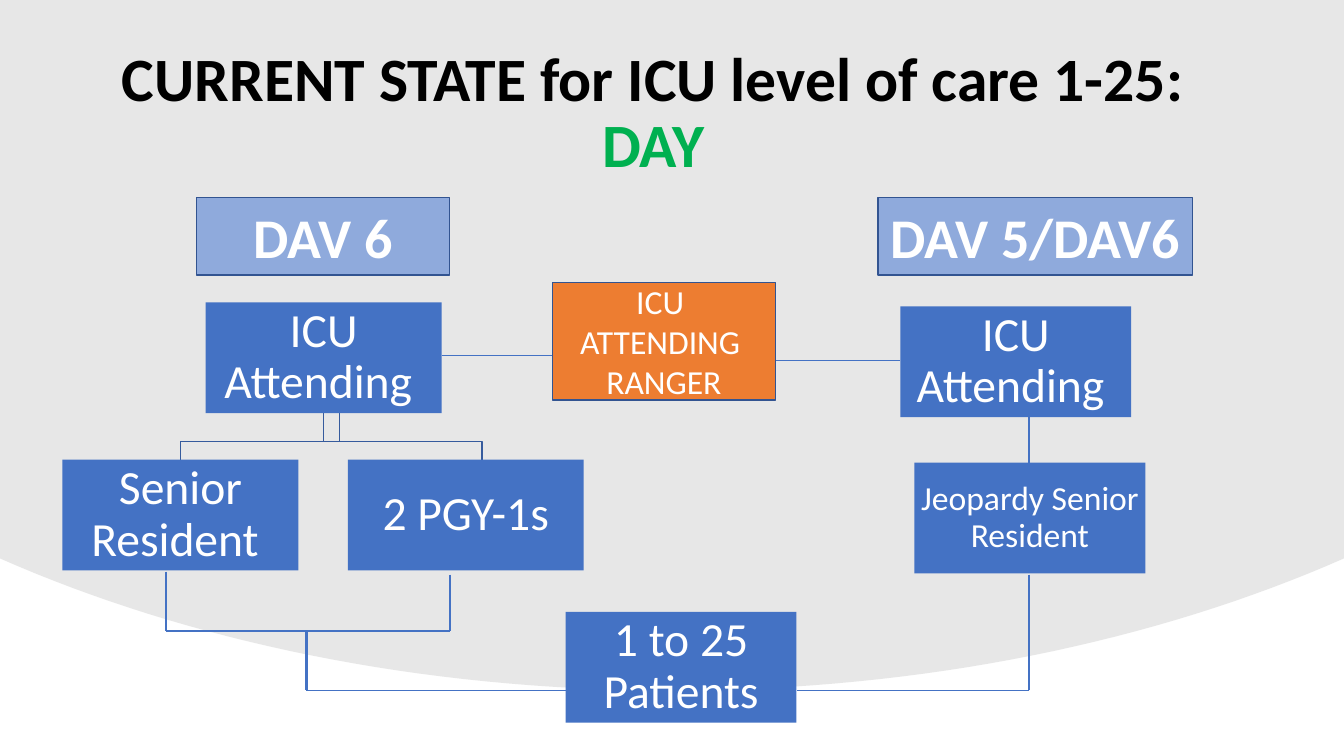
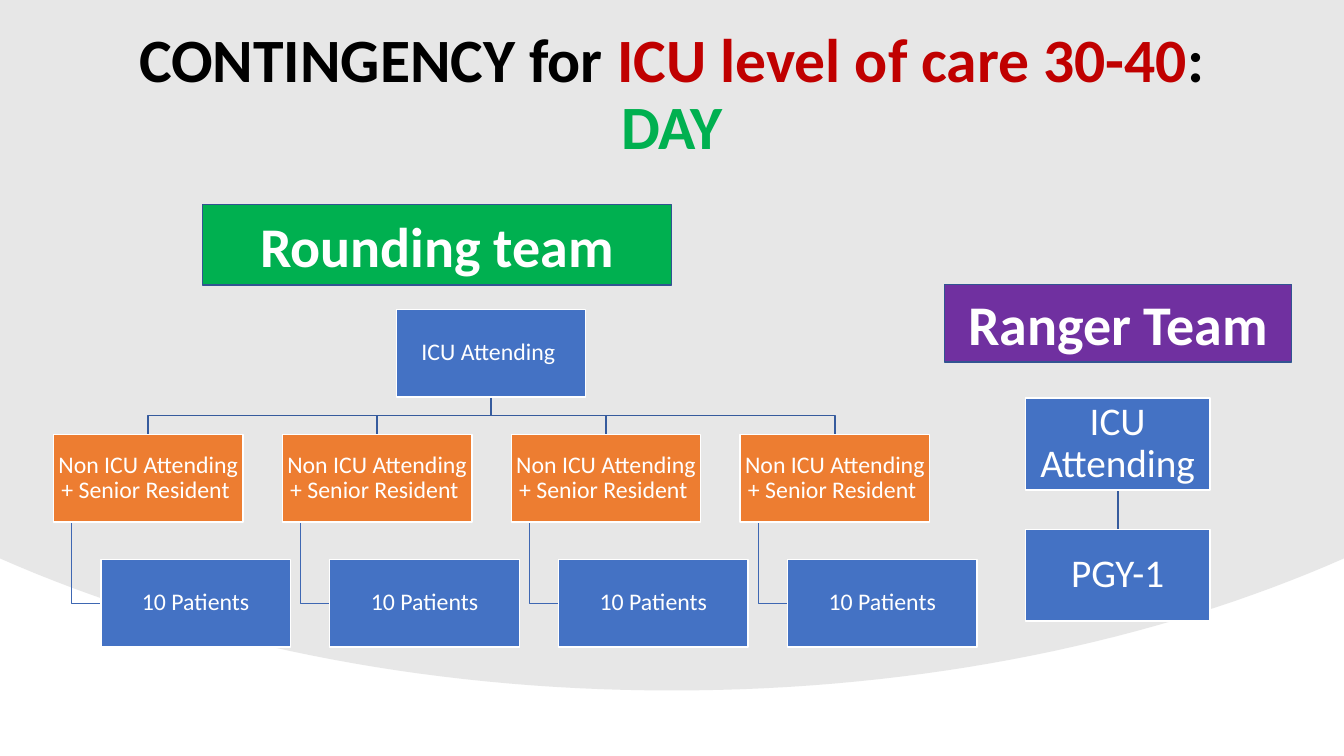
from dataclasses import dataclass

from lxml import etree
from pptx import Presentation
from pptx.dml.color import RGBColor
from pptx.enum.shapes import MSO_CONNECTOR, MSO_SHAPE
from pptx.enum.text import MSO_ANCHOR, PP_ALIGN
from pptx.oxml.ns import qn
from pptx.util import Inches, Pt

RECT = MSO_SHAPE.RECTANGLE
STRAIGHT = MSO_CONNECTOR.STRAIGHT
MIDDLE = MSO_ANCHOR.MIDDLE
CENTER = PP_ALIGN.CENTER


@dataclass(frozen=True)
class Theme:
    font: str = "Calibri"
    width: float = 13.33
    height: float = 7.5
    black: str = "000000"
    white: str = "FFFFFF"
    backdrop: str = "D9D9D9"
    backdrop_alpha: int = 62000
    blue: str = "4472C4"
    light_blue: str = "8FAADC"
    outline: str = "325491"
    branch: str = "365B9D"
    leaf: str = "3E67B2"
    orange: str = "ED7D31"
    green: str = "00B050"
    purple: str = "7030A0"
    red: str = "C00000"
    title_size: int = 44
    banner_size: int = 40
    large_size: int = 34
    medium_size: int = 28
    note_size: int = 24
    small_size: int = 17


T = Theme()


def rgb(value):
    return RGBColor.from_string(value)


def write(tf, paragraphs, size, color=T.white, bold=False, spacing=0.9, inset=0.02):
    tf.word_wrap = True
    tf.vertical_anchor = MIDDLE
    tf.margin_left = tf.margin_right = Inches(inset)
    tf.margin_top = tf.margin_bottom = Inches(inset)
    for i, runs in enumerate(paragraphs):
        p = tf.add_paragraph() if i else tf.paragraphs[0]
        p.alignment = CENTER
        p.line_spacing = spacing
        for text, run_color in [(runs, color)] if isinstance(runs, str) else runs:
            r = p.add_run()
            r.text = text
            r.font.name = T.font
            r.font.size = Pt(size)
            r.font.bold = bold
            r.font.color.rgb = rgb(run_color)


def add_box(s, x, y, w, h, paragraphs, size, fill=T.blue, line=None, **text_format):
    sp = s.shapes.add_shape(RECT, Inches(x), Inches(y), Inches(w), Inches(h))
    sp.shadow.inherit = False
    sp.fill.solid()
    sp.fill.fore_color.rgb = rgb(fill)
    if line:
        sp.line.color.rgb = rgb(line)
        sp.line.width = Pt(1)
    else:
        sp.line.fill.background()
    write(sp.text_frame, paragraphs, size, **text_format)


def add_banner(s, x, y, w, h, text, fill):
    add_box(s, x, y, w, h, [text], T.banner_size, fill, T.outline,
            bold=True, spacing=1.0, inset=0.05)


def add_line(s, x1, y1, x2, y2, width=1.5, color=T.blue):
    cn = s.shapes.add_connector(STRAIGHT, Inches(x1), Inches(y1), Inches(x2), Inches(y2))
    cn.line.color.rgb = rgb(color)
    cn.line.width = Pt(width)
    etree.SubElement(cn.element.find(qn("p:spPr")), qn("a:effectLst"))


def add_outline(s, points, close=False):
    emu = [(Inches(x), Inches(y)) for x, y in points]
    fb = s.shapes.build_freeform(*emu[0])
    fb.add_line_segments(emu[1:], close=close)
    sp = fb.convert_to_shape()
    sp.shadow.inherit = False
    return sp


def add_elbow(s, points, color=T.branch):
    sp = add_outline(s, points)
    sp.fill.background()
    sp.line.color.rgb = rgb(color)
    sp.line.width = Pt(1)


def add_fork(s, x, top, end_x, bottom, bar):
    add_elbow(s, [(x, top), (x, bar), (end_x, bar), (end_x, bottom)])


def bezier(points, steps=32):
    a, b, c, d = points
    for i in range(steps + 1):
        t = i / steps
        u = 1 - t
        yield tuple(u**3 * a[k] + 3 * u * u * t * b[k] + 3 * u * t * t * c[k] + t**3 * d[k]
                    for k in (0, 1))


def add_backdrop(s):
    right = list(bezier([(T.width, 5.54), (11.47, 6.36), (9.17, 6.85), (T.width / 2, 6.85)]))
    left = [(T.width - x, y) for x, y in reversed(right[:-1])]
    sp = add_outline(s, [(0, 0), (T.width, 0)] + right + left, close=True)
    sp.fill.solid()
    sp.fill.fore_color.rgb = rgb(T.backdrop)
    color = sp.element.find(".//" + qn("a:srgbClr"))
    etree.SubElement(color, qn("a:alpha"), val=str(T.backdrop_alpha))
    sp.line.fill.background()


def add_slide(prs, title, x, y, w):
    s = prs.slides.add_slide(prs.slide_layouts[6])
    add_backdrop(s)
    tb = s.shapes.add_textbox(Inches(x), Inches(y), Inches(w), Inches(1.45))
    write(tb.text_frame, [title], T.title_size, bold=True, inset=0.1)
    return s


def current_state(prs):
    s = add_slide(prs, [("CURRENT STATE for ICU level of care 1-25: ", T.black),
                        ("DAY", T.green)], 0.73, 0.41, 11.5)

    for stem, end in ((3.37, 1.79), (3.21, 4.78)):
        add_fork(s, stem, 4.1, end, 4.56, 4.38)

    for x1, y1, x2, y2, width in (
        (10.21, 4.13, 10.21, 4.59, 1.5),
        (10.21, 5.7, 10.21, 6.85, 1.5),
        (10.21, 6.85, 7.9, 6.85, 1),
        (1.65, 5.67, 1.65, 6.26, 1.5),
        (4.46, 5.7, 4.46, 6.26, 1.5),
        (1.65, 6.26, 4.46, 6.26, 1),
        (3.04, 6.26, 3.04, 6.85, 1.5),
        (3.04, 6.85, 5.61, 6.85, 1),
        (4.38, 3.53, 5.48, 3.53, 0.5),
        (7.69, 3.58, 8.93, 3.58, 0.5),
    ):
        add_line(s, x1, y1, x2, y2, width)

    for x, y, w, text, size in (
        (2.04, 3, 2.34, "ICU Attending ", T.large_size),
        (0.62, 4.56, 2.34, "Senior Resident ", T.large_size),
        (3.45, 4.56, 2.34, "2 PGY-1s", T.large_size),
        (5.61, 6.07, 2.29, "1 to 25 Patients", T.large_size),
        (8.93, 3.04, 2.29, "ICU Attending ", T.large_size),
        (9.07, 4.59, 2.29, "Jeopardy Senior Resident", T.note_size),
    ):
        add_box(s, x, y, w, 1.1, [text], size)

    add_banner(s, 1.95, 1.96, 2.51, 0.77, "DAV 6", T.light_blue)
    add_banner(s, 8.71, 1.96, 3.12, 0.77, "DAV 5/DAV6", T.light_blue)
    add_box(s, 5.48, 2.8, 2.21, 1.17, ["ICU ", "ATTENDING ", "RANGER"], T.note_size,
            T.orange, T.outline, spacing=1.0, inset=0)


def contingency(prs):
    s = add_slide(prs, [("CONTINGENCY for ", T.black), ("ICU level of care 30-40", T.red),
                        (": ", T.black), ("DAY", T.green)], 0.79, 0.23, 11.75)
    add_banner(s, 2.01, 2.03, 4.65, 0.8, "Rounding team", T.green)
    add_banner(s, 9.37, 2.82, 3.44, 0.77, "Ranger Team", T.purple)

    w, h, pitch = 1.88, 0.87, 2.27
    lead_x = 3.93
    lead_y, team_y, patients_y = (3.07 + 1.24 * row for row in range(3))

    def add_card(x, y, text, fill=T.blue):
        add_box(s, x, y, w, h, [text], T.small_size, fill, T.white, inset=0.01)

    for i in range(4):
        x = 0.53 + pitch * i
        patients_x = x + 0.47
        stub_x, stub_y = x + 0.18, patients_y + h / 2
        add_fork(s, lead_x + w / 2, lead_y + h, x + w / 2, team_y, 4.12)
        add_elbow(s, [(stub_x, team_y + h), (stub_x, stub_y), (patients_x, stub_y)], T.leaf)
        add_card(x, team_y, "Non ICU Attending + Senior Resident ", T.orange)
        add_card(patients_x, patients_y, "10 Patients")
    add_card(lead_x, lead_y, "ICU Attending ")

    add_line(s, 11.09, 4.86, 11.09, 5.25, 1, T.branch)
    for y, text in ((3.95, "ICU Attending"), (5.25, "PGY-1")):
        add_box(s, 10.17, y, 1.83, 0.91, [text], T.medium_size, line=T.white)


def main():
    prs = Presentation()
    prs.slide_width = Inches(T.width)
    prs.slide_height = Inches(T.height)
    current_state(prs)
    contingency(prs)
    prs.save("out.pptx")


if __name__ == "__main__":
    main()
